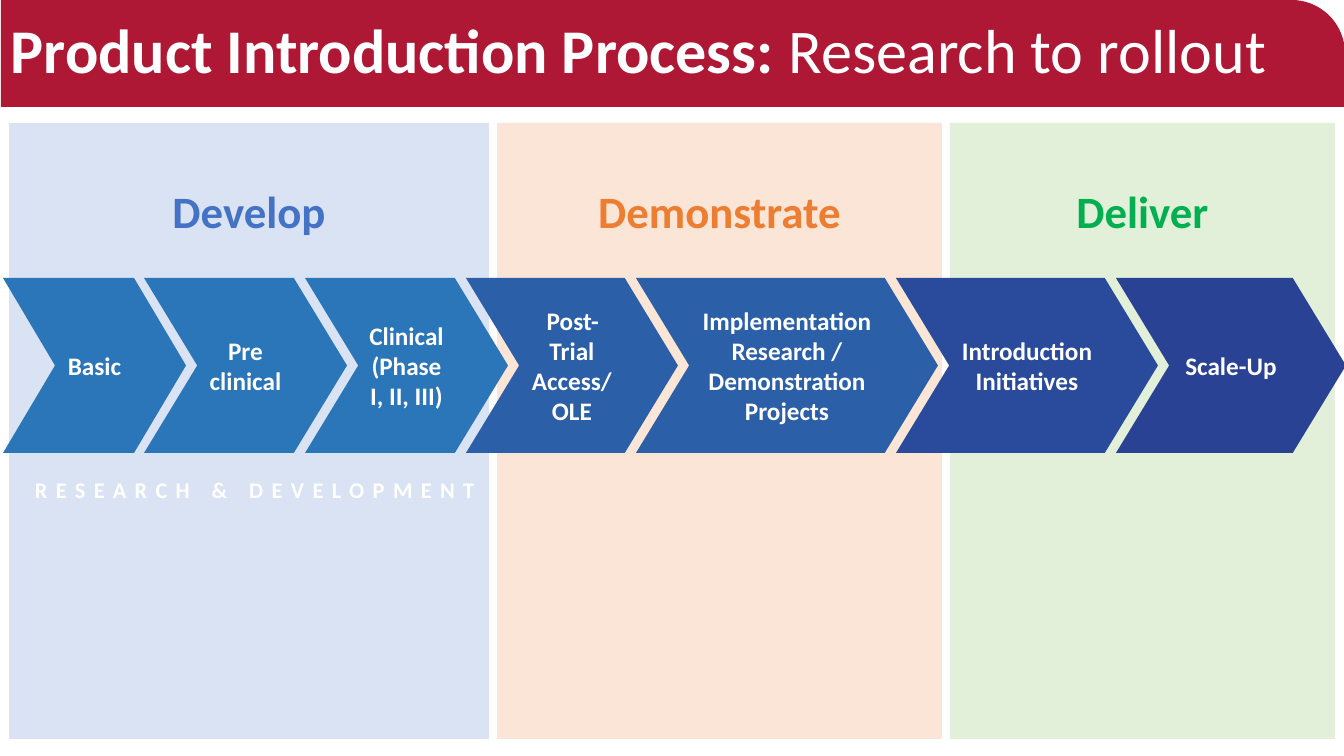
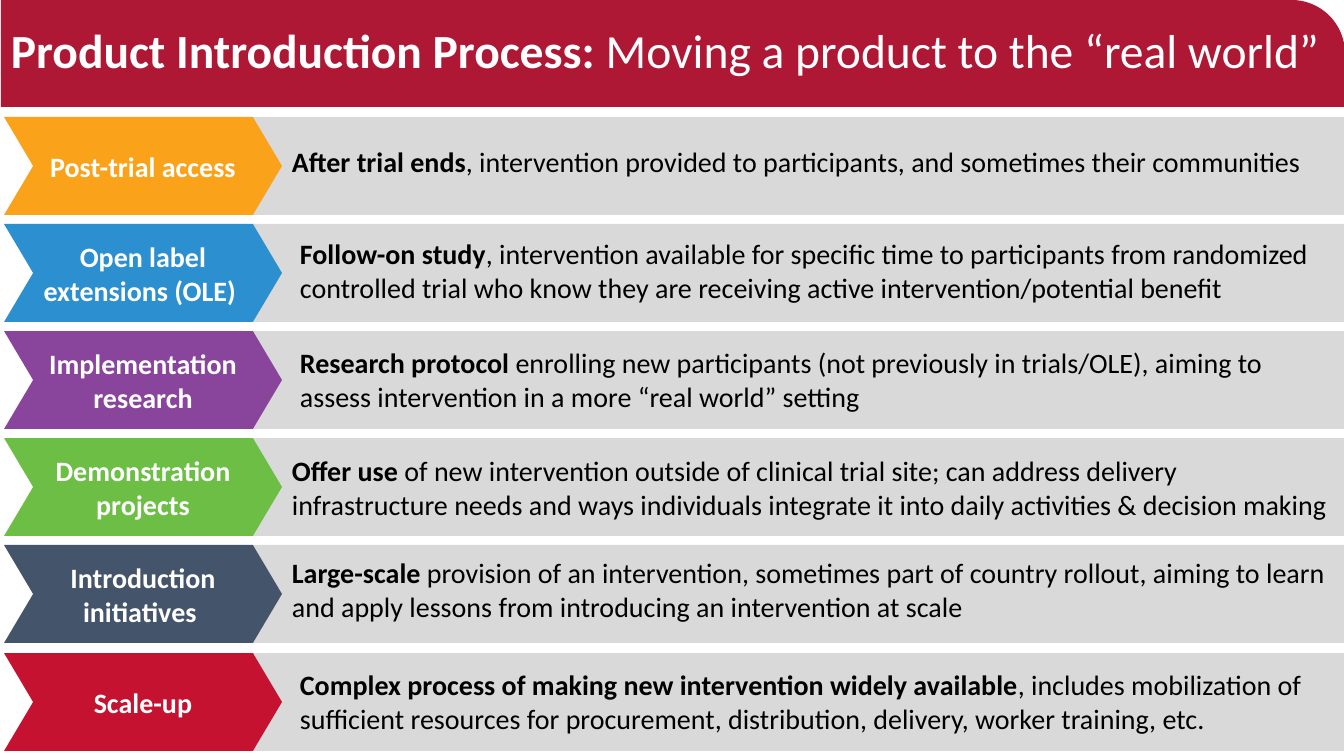
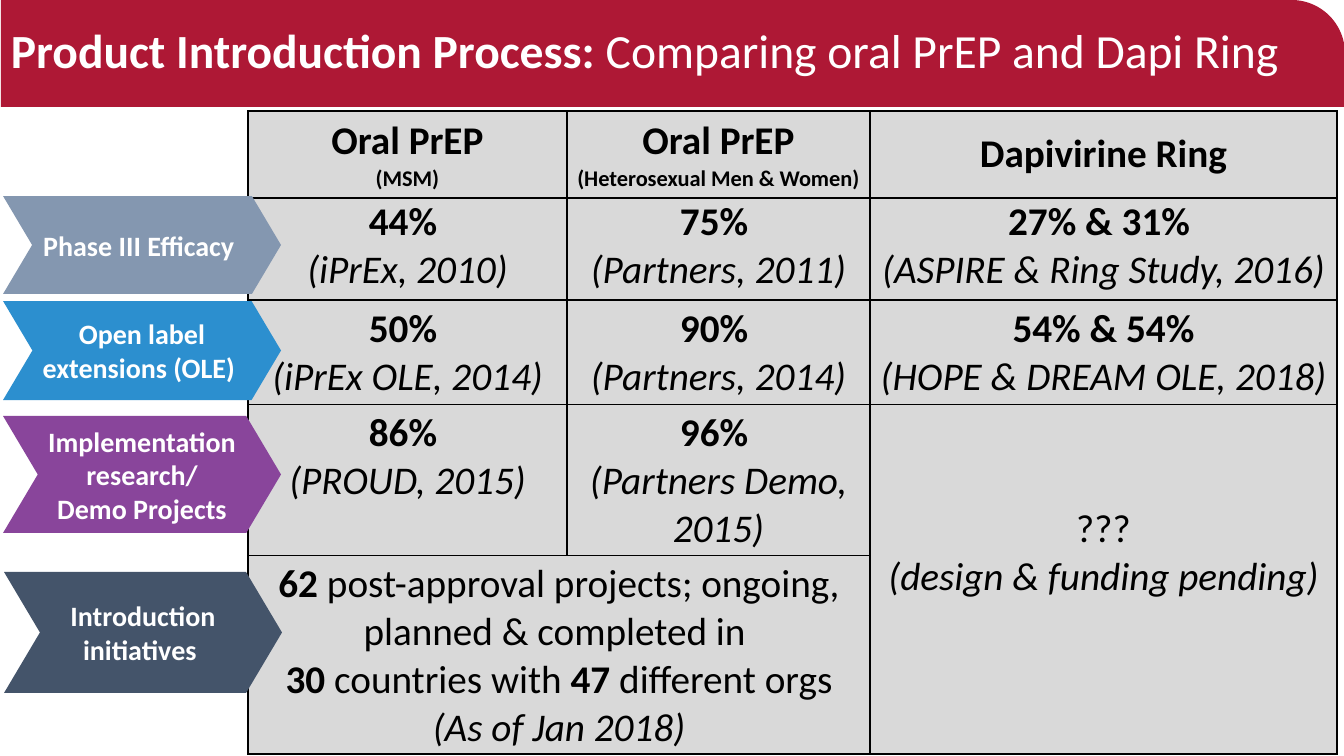
"""Build three slides on the product introduction process."""
from lxml.etree import SubElement
from pptx import Presentation
from pptx.dml.color import RGBColor
from pptx.enum.shapes import MSO_SHAPE
from pptx.enum.text import MSO_ANCHOR, PP_ALIGN
from pptx.oxml.ns import qn
from pptx.util import Emu, Pt

SLIDE_W, SLIDE_H = 1344, 756
EMU_PER_PX = 12192000 / SLIDE_W
FONT = "Calibri"
WHITE, BLACK, GREY, CRIMSON = "FFFFFF", "000000", "D9D9D9", "AE1835"
BLUE, PURPLE, SLATE = "2C8FCF", "89459B", "44546A"
BOLD, PLAIN, ITALIC = {"bold": True}, {"bold": False}, {"italic": True}
SMALL = {"bold": True, "size": 16}

TITLE_LEAD = "Product Introduction Process: "
TITLES = [
    ("Research to rollout", 44.4),
    ("Moving a product to the “real world”", 34),
    ("Comparing oral PrEP and Dapi Ring", 34),
]

PHASES = [
    ("Develop", 480, "DAE3F3", "4472C4"),
    ("Demonstrate", 445, "FBE5D6", "ED7D31"),
    ("Deliver", 385, "E2F0D9", "00B050"),
]
PHASE_LEFT, PHASE_GAP = 9, 8
PIPELINE = [
    (["Basic"], 183, "2B75B9"),
    (["Pre", "clinical"], 203, "2B75B9"),
    (["Clinical (Phase I, II, III)"], 203, "2B75B9"),
    (["Post-Trial Access/OLE"], 212, "2B5FA8"),
    (["Implementation Research /", "Demonstration Projects"], 302, "2B5FA8"),
    (["Introduction Initiatives"], 262, "2A4B9B"),
    (["Scale-Up"], 230, "2A4294"),
]
PIPELINE_LEFT, PIPELINE_OVERLAP = 3, 42

STEPS = [
    ("Post-trial access", "FBA21B", (282, 140, 1046), "After trial ends",
     ", intervention provided to participants, and sometimes their communities"),
    ("Open label extensions (OLE) ", BLUE, (290, 232, 1088), "Follow-on study",
     ", intervention available for specific time to participants from randomized "
     "controlled trial who know they are receiving active intervention/potential benefit"),
    ("Implementation research", PURPLE, (290, 341, 1053), "Research protocol ",
     "enrolling new participants (not previously in trials/OLE), aiming to assess "
     "intervention in a more “real world” setting"),
    ("Demonstration projects", "6CBE44", (282, 449, 1062), "Offer use ",
     "of new intervention outside of clinical trial site; can address delivery "
     "infrastructure needs and ways individuals integrate it into daily activities "
     "& decision making"),
    ("Introduction initiatives ", SLATE, (282, 551, 1088), "Large-scale ",
     "provision of an intervention, sometimes part of country rollout, aiming to learn "
     "and apply lessons from introducing an intervention at scale"),
    ("Scale-up", "C41230", (290, 663, 1088),
     "Complex process of making new intervention widely available",
     ", includes mobilization of sufficient resources for procurement, distribution, "
     "delivery, worker training, etc."),
]
STEP_TOP, STEP_SPAN = 117, 536

COLUMN_WIDTHS = [319, 303, 467]
ROW_HEIGHTS = [87, 102, 103, 113, 113]
HEADINGS = [("Oral PrEP", "(MSM)"), ("Oral PrEP", "(Heterosexual Men & Women)"),
            ("Dapivirine Ring",)]
RESULTS = [
    [("44% ", "(iPrEx, 2010)"), ("75% ", "(Partners, 2011)"),
     ("27% & 31% ", "(ASPIRE & Ring Study, 2016)")],
    [("50% ", "(iPrEx OLE, 2014)"), ("90% ", "(Partners, 2014)"),
     ("54% & 54%", "(HOPE & DREAM OLE, 2018)")],
    [("86% ", "(PROUD, 2015)"), ("96% ", "(Partners Demo, 2015)")],
]
PENDING = ["???", [("(design & funding pending)", ITALIC)]]
PROJECTS = [
    [("62", BOLD), (" post-approval projects; ongoing, planned & completed in ", PLAIN)],
    [("30 ", BOLD), ("countries with ", PLAIN), ("47", BOLD), (" different orgs", PLAIN)],
    [("(As of Jan 2018)", ITALIC)],
]
STAGES = [
    (["Phase III Efficacy "], (3, 196, 278, 98), "8497B0"),
    (["Open label extensions (OLE) "], (3, 301, 278, 99), BLUE),
    (["Implementation research/", "Demo Projects"], (3, 416, 278, 117), PURPLE),
    (["Introduction initiatives "], (4, 572, 278, 121), SLATE),
]


def px(length):
    return Emu(round(length * EMU_PER_PX))


def rgb(value):
    return RGBColor.from_string(value)


def write(frame, paragraphs, size=20, color=WHITE, bold=False, align=PP_ALIGN.CENTER,
          spacing=None, line_spacing=None, space_before=None):
    frame.word_wrap = True
    for index, content in enumerate(paragraphs):
        paragraph = frame.add_paragraph() if index else frame.paragraphs[0]
        paragraph.alignment = align
        if line_spacing:
            paragraph.line_spacing = line_spacing
        if space_before:
            paragraph.space_before = Pt(space_before)
        for words, style in [(content, {})] if isinstance(content, str) else content:
            run = paragraph.add_run()
            run.text = words
            run.font.name = FONT
            run.font.size = Pt(style.get("size", size))
            run.font.bold = style.get("bold", bold)
            run.font.italic = style.get("italic", False)
            run.font.color.rgb = rgb(color)
            if spacing:
                run._r.get_or_add_rPr().set("spc", str(spacing))


def add_block(slide, preset, box, fill, adjustment=None):
    block = slide.shapes.add_shape(preset, *map(px, box))
    block.shadow.inherit = False
    block.fill.solid()
    block.fill.fore_color.rgb = rgb(fill)
    block.line.fill.background()
    if adjustment is not None:
        block.adjustments[0] = adjustment
    block.text_frame.vertical_anchor = MSO_ANCHOR.MIDDLE
    return block


def add_chevron(slide, lines, box, fill, size=20, point=0.297):
    chevron = add_block(slide, MSO_SHAPE.CHEVRON, box, fill, point)
    write(chevron.text_frame, lines, size=size, bold=True)


def add_label(slide, box, paragraphs, **style):
    write(slide.shapes.add_textbox(*map(px, box)).text_frame, paragraphs, **style)


def add_title(slide, topic, size):
    band = add_block(slide, MSO_SHAPE.ROUND_1_RECTANGLE, (1, 0, 1344, 107), CRIMSON, 0.5)
    write(band.text_frame, [[(TITLE_LEAD, BOLD), (topic, PLAIN)]], size=size,
          align=PP_ALIGN.LEFT, line_spacing=0.9, space_before=10)


def add_borders(cell):
    properties = cell._tc.get_or_add_tcPr()
    for position, side in enumerate(("lnL", "lnR", "lnT", "lnB")):
        border = SubElement(properties, qn(f"a:{side}"), w=str(Pt(1)))
        fill = SubElement(border, qn("a:solidFill"))
        SubElement(fill, qn("a:srgbClr"), val=BLACK)
        properties.insert(position, border)


def build_rollout(slide):
    left = PHASE_LEFT
    for name, width, fill, color in PHASES:
        add_block(slide, MSO_SHAPE.RECTANGLE, (left, 123, width, 616), fill)
        add_label(slide, (left, 179, width, 65), [name], size=32, color=color, bold=True)
        left += width + PHASE_GAP
    left = PIPELINE_LEFT
    for index, (lines, width, fill) in enumerate(PIPELINE):
        add_chevron(slide, lines, (left, 278, width, 175), fill, size=18,
                    point=0.304 if index else 0.297)
        left += width - PIPELINE_OVERLAP
    add_label(slide, (15, 471, 480, 37), ["RESEARCH & DEVELOPMENT"], size=16, bold=True,
              spacing=600)


def build_steps(slide):
    for index, (name, fill, (left, text_top, width), lead, detail) in enumerate(STEPS):
        top = STEP_TOP + STEP_SPAN * index // (len(STEPS) - 1)
        add_block(slide, MSO_SHAPE.RECTANGLE, (252, top, 1093, 98), GREY)
        add_chevron(slide, [name], (4, top, 278, 98), fill)
        add_label(slide, (left, text_top, width, 78), [[(lead, BOLD), (detail, PLAIN)]],
                  color=BLACK, align=PP_ALIGN.LEFT)


def build_comparison(slide):
    frame = slide.shapes.add_table(
        len(ROW_HEIGHTS), len(COLUMN_WIDTHS), px(248), px(111),
        px(sum(COLUMN_WIDTHS)), px(sum(ROW_HEIGHTS)))
    table = frame.table
    table.first_row = table.horz_banding = False
    for column, width in zip(table.columns, COLUMN_WIDTHS):
        column.width = px(width)
    for row, height in zip(table.rows, ROW_HEIGHTS):
        row.height = px(height)
    for row_index, row in enumerate(table.rows):
        for cell in row.cells:
            cell.fill.solid()
            cell.fill.fore_color.rgb = rgb(GREY)
            add_borders(cell)
            if row_index < 2:
                cell.margin_left = cell.margin_right = px(7)
                cell.margin_top = cell.margin_bottom = 0
    table.cell(3, 2).merge(table.cell(4, 2))
    table.cell(4, 0).merge(table.cell(4, 1))

    contents = {(3, 2): PENDING, (4, 0): PROJECTS}
    for row_index, entries in enumerate([HEADINGS] + RESULTS):
        second_style = ITALIC if row_index else SMALL
        for column_index, lines in enumerate(entries):
            contents[row_index, column_index] = [
                [(line, style)] for line, style in zip(lines, (BOLD, second_style))]
    for (row_index, column_index), paragraphs in contents.items():
        cell = table.cell(row_index, column_index)
        write(cell.text_frame, paragraphs, size=28, color=BLACK)
        cell.vertical_anchor = MSO_ANCHOR.TOP if row_index else MSO_ANCHOR.MIDDLE
    table.cell(3, 2).margin_top = px(101)
    for lines, box, fill in STAGES:
        add_chevron(slide, lines, box, fill)


def main():
    deck = Presentation()
    deck.slide_width, deck.slide_height = px(SLIDE_W), px(SLIDE_H)
    for (topic, size), build in zip(TITLES, (build_rollout, build_steps, build_comparison)):
        slide = deck.slides.add_slide(deck.slide_layouts[6])
        add_title(slide, topic, size)
        build(slide)
    deck.save("out.pptx")


if __name__ == "__main__":
    main()
